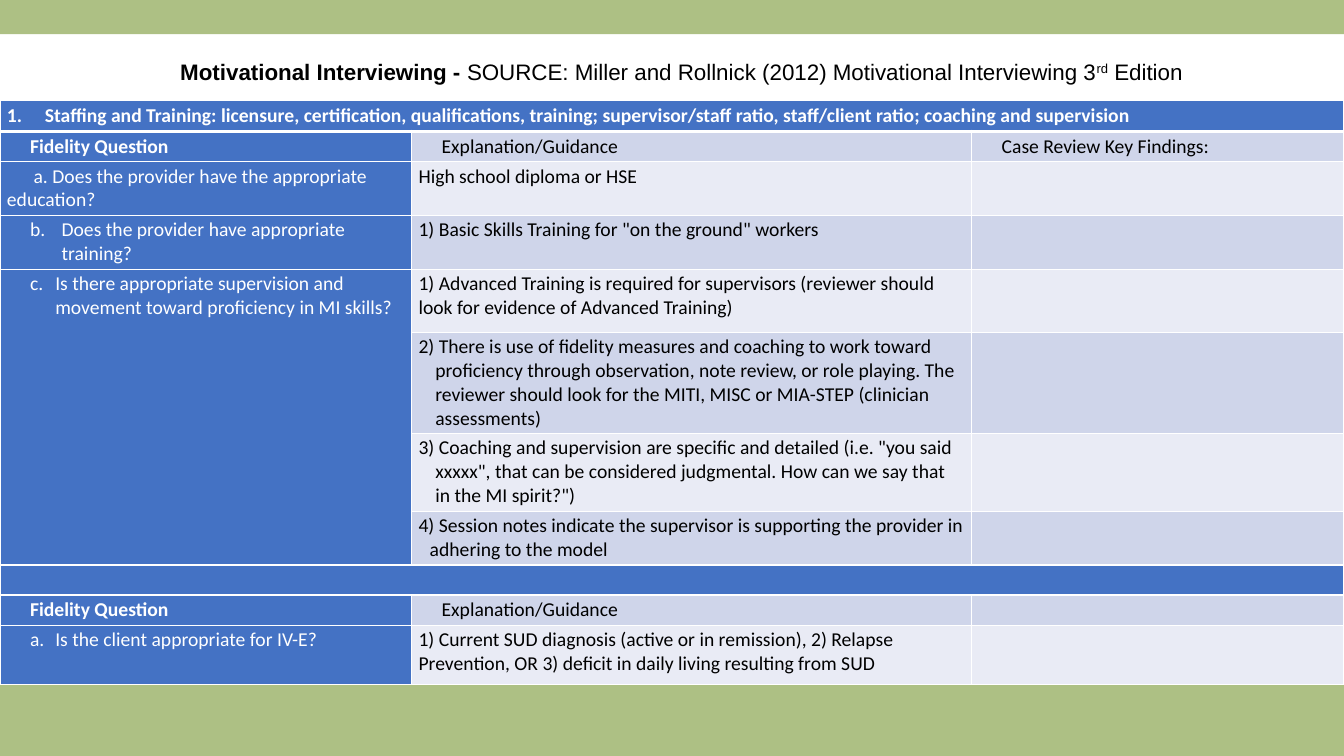
from lxml.etree import SubElement
from pptx import Presentation
from pptx.dml.color import RGBColor
from pptx.enum.shapes import MSO_SHAPE as Shape
from pptx.enum.text import MSO_ANCHOR as Anchor, MSO_AUTO_SIZE as AutoSize, PP_ALIGN as Align
from pptx.oxml.ns import qn
from pptx.util import Pt

GREEN, BLUE, WHITE, BLACK = "ADC084", "4472C4", "FFFFFF", "000000"
BANDS = ("E9EBF5", "CFD5EA")
WIDTH, HEIGHT = 960, 540
COLUMNS = (294, 400, 266)
ROW_HEIGHTS = (22, 21.5, 38.5, 38.5, 45, 72, 55.5, 38.5, 21.5, 21.5, 42.5)
SECTION_ROWS = (0, 8)
HEADING_ROWS = (1, 9)
SUPERVISION_ROWS = (4, 7)

# Each entry: text, left margin, first-line indent
EMPTY = ("", 0, 0)
QUESTION = ("Fidelity Question", 16.5, 0)
GUIDANCE = ("Explanation/Guidance", 16.5, 0)
ROWS = [
    [("Staffing and Training: licensure, certification, qualifications, training; "
      "supervisor/staff ratio, staff/client ratio; coaching and supervision", 27, -27),
     EMPTY, EMPTY],
    [QUESTION, GUIDANCE, ("Case Review Key Findings:", 16.5, 0)],
    [("a. Does the provider have the appropriate education?", 0, 19),
     ("High school diploma or HSE", 0, 0), EMPTY],
    [("b.\tDoes the provider have appropriate training?", 39, -22.5),
     ('1) Basic Skills Training for "on the ground" workers', 0, 0), EMPTY],
    [("c.\tIs there appropriate supervision and movement toward proficiency in MI skills?",
      34.5, -18),
     ("1) Advanced Training is required for supervisors (reviewer should look for "
      "evidence of Advanced Training)", 0, 0), EMPTY],
    [EMPTY,
     ("2) There is use of fidelity measures and coaching to work toward proficiency "
      "through observation, note review, or role playing. The reviewer should look for "
      "the MITI, MISC or MIA-STEP (clinician assessments)", 12, -12), EMPTY],
    [EMPTY,
     ('3) Coaching and supervision are specific and detailed (i.e. "you said xxxxx", '
      'that can be considered judgmental. How can we say that in the MI spirit?")',
      12, -12), EMPTY],
    [EMPTY,
     ("4) Session notes indicate the supervisor is supporting the provider in adhering "
      "to the model", 8, -8), EMPTY],
    [EMPTY, EMPTY, EMPTY],
    [QUESTION, GUIDANCE, EMPTY],
    [("a.\tIs the client appropriate for IV-E?", 34.5, -18),
     ("1) Current SUD diagnosis (active or in remission), 2) Relapse Prevention, OR "
      "3) deficit in daily living resulting from SUD", 0, 0), EMPTY],
]


def color(value):
    return RGBColor.from_string(value)


def add_band(page, left, top, width, height):
    band = page.shapes.add_shape(Shape.RECTANGLE, Pt(left), Pt(top), Pt(width), Pt(height))
    band.shadow.inherit = False
    band.fill.solid()
    band.fill.fore_color.rgb = color(GREEN)
    band.line.fill.background()


def add_title(page, left, top, width, height):
    title = page.shapes.title
    title.left, title.top, title.width, title.height = Pt(left), Pt(top), Pt(width), Pt(height)
    frame = title.text_frame
    frame.word_wrap = True
    frame.auto_size = AutoSize.NONE
    frame.vertical_anchor = Anchor.TOP
    para = frame.paragraphs[0]
    para.alignment = Align.CENTER
    para.font.size, para.font.name = Pt(16), "Arial"
    para.font.color.rgb = color(BLACK)
    parts = [("Motivational Interviewing - ", True, 0),
             ("SOURCE: Miller and Rollnick (2012) Motivational Interviewing 3", False, 0),
             ("rd", False, 30000), (" Edition", False, 0)]
    for text, bold, baseline in parts:
        span = para.add_run()
        span.text = text
        span.font.bold = bold
        if baseline:
            span.font._element.set("baseline", str(baseline))


def add_borders(cell, bottom):
    properties = cell._tc.get_or_add_tcPr()
    for side, weight in (("L", 1), ("R", 1), ("T", 1), ("B", bottom)):
        line = SubElement(properties, qn(f"a:ln{side}"), w=str(Pt(weight)))
        SubElement(SubElement(line, qn("a:solidFill")), qn("a:srgbClr"), val=WHITE)


def fill_cell(cell, row, column, entry):
    text, margin, indent = entry
    section = row in SECTION_ROWS
    blue = section or column == 0
    add_borders(cell, 3 if row == 0 else 1)
    cell.fill.solid()
    cell.fill.fore_color.rgb = color(BLUE if blue else BANDS[row % 2])
    cell.margin_left = cell.margin_right = Pt(5)
    cell.margin_top = cell.margin_bottom = Pt(2)
    cell.vertical_anchor = Anchor.MIDDLE if section or row in HEADING_ROWS else Anchor.TOP

    para = cell.text_frame.paragraphs[0]
    if not text:
        # Keeps an empty line from stretching its row
        SubElement(para._p, qn("a:endParaRPr"), sz="1400")
        return
    para.text = text
    properties = para._p.get_or_add_pPr()
    properties.set("marL", str(Pt(margin)))
    properties.set("indent", str(Pt(indent)))
    if section:
        SubElement(properties, qn("a:buFont"), typeface="+mj-lt")
        SubElement(properties, qn("a:buAutoNum"), type="arabicPeriod")
    para.font.size, para.font.name = Pt(14), "Calibri"
    para.font.bold = section or (blue and row in HEADING_ROWS)
    para.font.color.rgb = color(WHITE if blue else BLACK)


def add_review_table(page, left, top, width, height):
    frame = page.shapes.add_table(len(ROWS), len(COLUMNS),
                                  Pt(left), Pt(top), Pt(width), Pt(height))
    table = frame.table
    table.first_row = table.horz_banding = False
    for column, size in zip(table.columns, COLUMNS):
        column.width = Pt(size)
    for row, size in zip(table.rows, ROW_HEIGHTS):
        row.height = Pt(size)
    for row, entries in enumerate(ROWS):
        for column, entry in enumerate(entries):
            fill_cell(table.cell(row, column), row, column, entry)

    # Section bars span all columns; the supervision question spans its rows
    for row in SECTION_ROWS:
        table.cell(row, 0).merge(table.cell(row, len(COLUMNS) - 1))
    first, last = SUPERVISION_ROWS
    table.cell(first, 0).merge(table.cell(last, 0))


def main():
    deck = Presentation()
    deck.slide_width, deck.slide_height = Pt(WIDTH), Pt(HEIGHT)
    page = deck.slides.add_slide(deck.slide_layouts[5])
    add_band(page, 0, 483, WIDTH, 57)
    add_band(page, 0, 0, WIDTH, 24.5)
    add_title(page, 29.5, 38, 914.5, 26.5)
    add_review_table(page, 0, 72, WIDTH, sum(ROW_HEIGHTS))
    deck.save("out.pptx")


if __name__ == "__main__":
    main()
